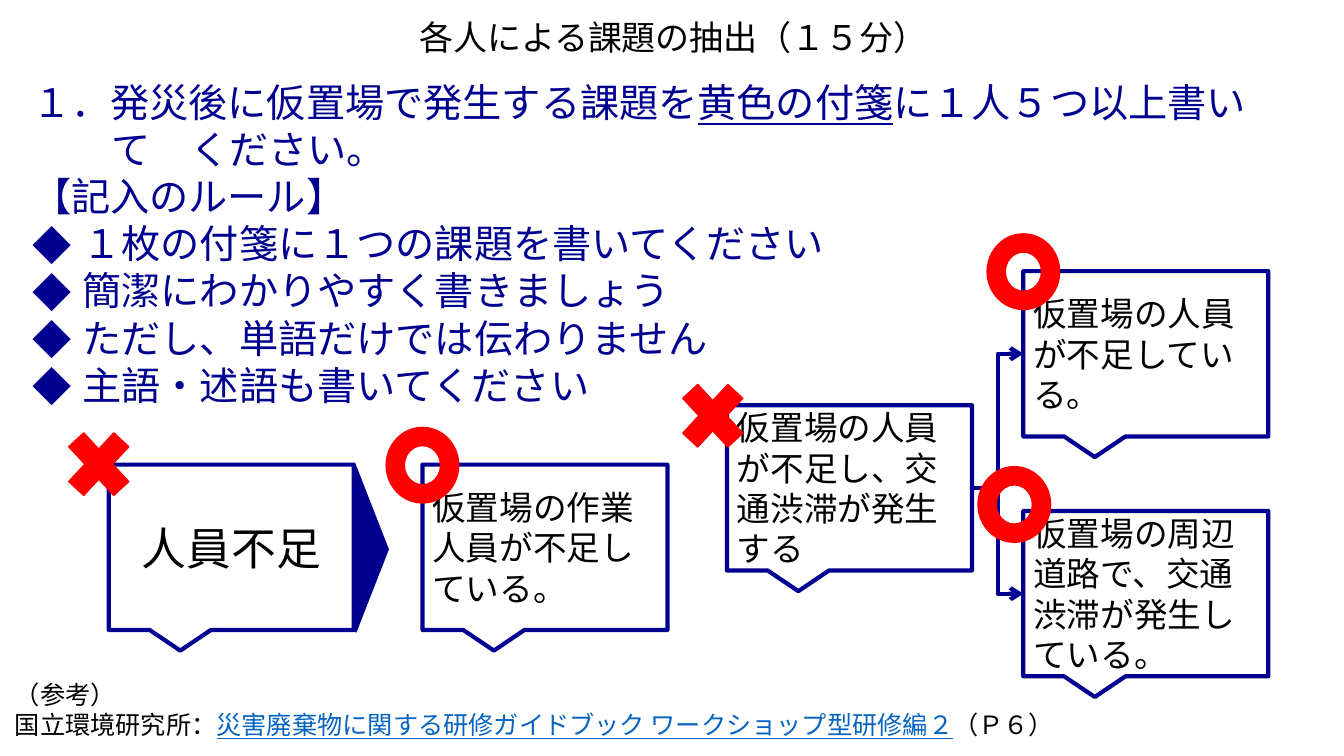
from lxml import etree
from pptx import Presentation
from pptx.dml.color import RGBColor
from pptx.enum.shapes import MSO_CONNECTOR, MSO_SHAPE
from pptx.enum.text import MSO_ANCHOR, PP_ALIGN
from pptx.oxml.ns import qn
from pptx.util import Inches, Pt

ELBOW = MSO_CONNECTOR.ELBOW
CALLOUT = MSO_SHAPE.RECTANGULAR_CALLOUT
TRIANGLE = MSO_SHAPE.ISOSCELES_TRIANGLE
DONUT, CROSS = MSO_SHAPE.DONUT, MSO_SHAPE.MATH_MULTIPLY
TOP, MIDDLE = MSO_ANCHOR.TOP, MSO_ANCHOR.MIDDLE
LEFT, CENTER = PP_ALIGN.LEFT, PP_ALIGN.CENTER
FONT = "Noto Sans CJK JP"
NAVY, RED, BLACK, LINK = "000090", "FF0000", "000000", "0563C1"


def rgb(color):
    return RGBColor.from_string(color)


def write(sp, paragraphs, size, color=BLACK, align=LEFT, anchor=TOP):
    """Fill a shape with paragraphs, each a list of (text, format changes) runs."""
    tf = sp.text_frame
    tf.word_wrap = True
    tf.vertical_anchor = anchor
    for i, runs in enumerate(paragraphs):
        p = tf.paragraphs[0] if i == 0 else tf.add_paragraph()
        p.alignment = align
        for text, changes in runs:
            r = p.add_run()
            r.text = text
            formats = {"name": FONT, "size": Pt(size), "underline": False} | changes
            r.font.color.rgb = rgb(formats.pop("color", color))
            for name, value in formats.items():
                setattr(r.font, name, value)
            etree.SubElement(r.font._element, qn("a:ea"), typeface=FONT)
    return tf


prs = Presentation()
prs.slide_width, prs.slide_height = Inches(13.33), Inches(7.5)
s = prs.slides.add_slide(prs.slide_layouts[6])

# Title
title = s.shapes.add_textbox(Inches(0.93), Inches(0.16), Inches(11.5), Inches(0.46))
tf = write(title, [[("各人による課題の抽出（１５分）", {})]], 24.3, align=CENTER, anchor=MIDDLE)
tf.paragraphs[0].line_spacing = 0.9

# Task and writing rules
rules = [
    "１枚の付箋に１つの課題を書いてください",
    "簡潔にわかりやすく書きましょう",
    "ただし、単語だけでは伝わりません",
    "主語・述語も書いてください",
]
task = [
    ("１．発災後に仮置場で発生する課題を", {}),
    ("黄色の付箋", {"underline": True}),
    ("に１人５つ以上書いて　ください。", {}),
]
body = s.shapes.add_textbox(Inches(0.22), Inches(0.73), Inches(12.8), Inches(3.4))
tf = write(body, [task, [("【記入のルール】", {})]] + [[(rule, {})] for rule in rules], 28, NAVY)
hanging = [(tf.paragraphs[0], 0.79)] + [(p, 0.5) for p in tf.paragraphs[2:]]
for p, indent in hanging:
    pPr = p._p.get_or_add_pPr()
    pPr.set("marL", str(Inches(indent)))
    pPr.set("indent", str(-Inches(indent)))
for p in tf.paragraphs[2:]:
    etree.SubElement(p._p.pPr, qn("a:buFont"), typeface=FONT)
    etree.SubElement(p._p.pPr, qn("a:buChar"), char="◆")

# Sticky notes
notes = [
    (1.08, 4.61, "人員不足", 32, CENTER),
    (4.19, 4.61, "仮置場の作業人員が不足している。", 24, LEFT),
    (7.21, 4.02, "仮置場の人員が不足し、交通渋滞が発生する", 24, LEFT),
    (10.15, 5.07, "仮置場の周辺道路で、交通渋滞が発生している。", 24, LEFT),
    (10.15, 2.69, "仮置場の人員が不足している。", 24, LEFT),
]
for x, y, text, size, align in notes:
    sp = s.shapes.add_shape(CALLOUT, Inches(x), Inches(y), Inches(2.43), Inches(1.64))
    sp.shadow.inherit = False
    sp.fill.background()
    sp.line.color.rgb = rgb(NAVY)
    sp.line.width = Pt(3)
    write(sp, [[(text, {})]], size, align=align, anchor=MIDDLE)

# Arrows from the mixed note to the two separate notes
for end_y in (3.51, 5.89):
    cn = s.shapes.add_connector(ELBOW, Inches(9.64), Inches(4.84), Inches(10.15), Inches(end_y))
    cn.line.color.rgb = rgb(NAVY)
    cn.line.width = Pt(3)
    etree.SubElement(cn.line._get_or_add_ln(), qn("a:tailEnd"), type="arrow")
    etree.SubElement(cn._element.spPr, qn("a:effectLst"))

# Solid pointer, good marks and bad marks
marks = [
    (TRIANGLE, 2.87, 5.29, 1.64, 0.32, 90, NAVY),
    (DONUT, 3.83, 4.24, 0.72, 0.75, 0, RED),
    (DONUT, 9.79, 2.32, 0.72, 0.75, 0, RED),
    (DONUT, 9.7, 4.63, 0.72, 0.75, 0, RED),
    (CROSS, 0.55, 4.14, 0.86, 0.93, 0, RED),
    (CROSS, 6.64, 3.66, 0.86, 0.93, 0, RED),
]
for kind, x, y, w, h, rotation, color in marks:
    sp = s.shapes.add_shape(kind, Inches(x), Inches(y), Inches(w), Inches(h))
    sp.shadow.inherit = False
    sp.rotation = rotation
    sp.fill.solid()
    sp.fill.fore_color.rgb = sp.line.color.rgb = rgb(color)
    sp.line.width = Pt(1)

# Reference
reference = [
    ("国立環境研究所：", {}),
    ("災害廃棄物に関する研修ガイドブック ワークショップ型研修編２", {"color": LINK, "underline": True}),
    ("（Ｐ６）", {}),
]
sp = s.shapes.add_textbox(Inches(0.05), Inches(6.69), Inches(11.36), Inches(0.71))
write(sp, [[("（参考）", {})], reference], 18)

prs.save("out.pptx")
